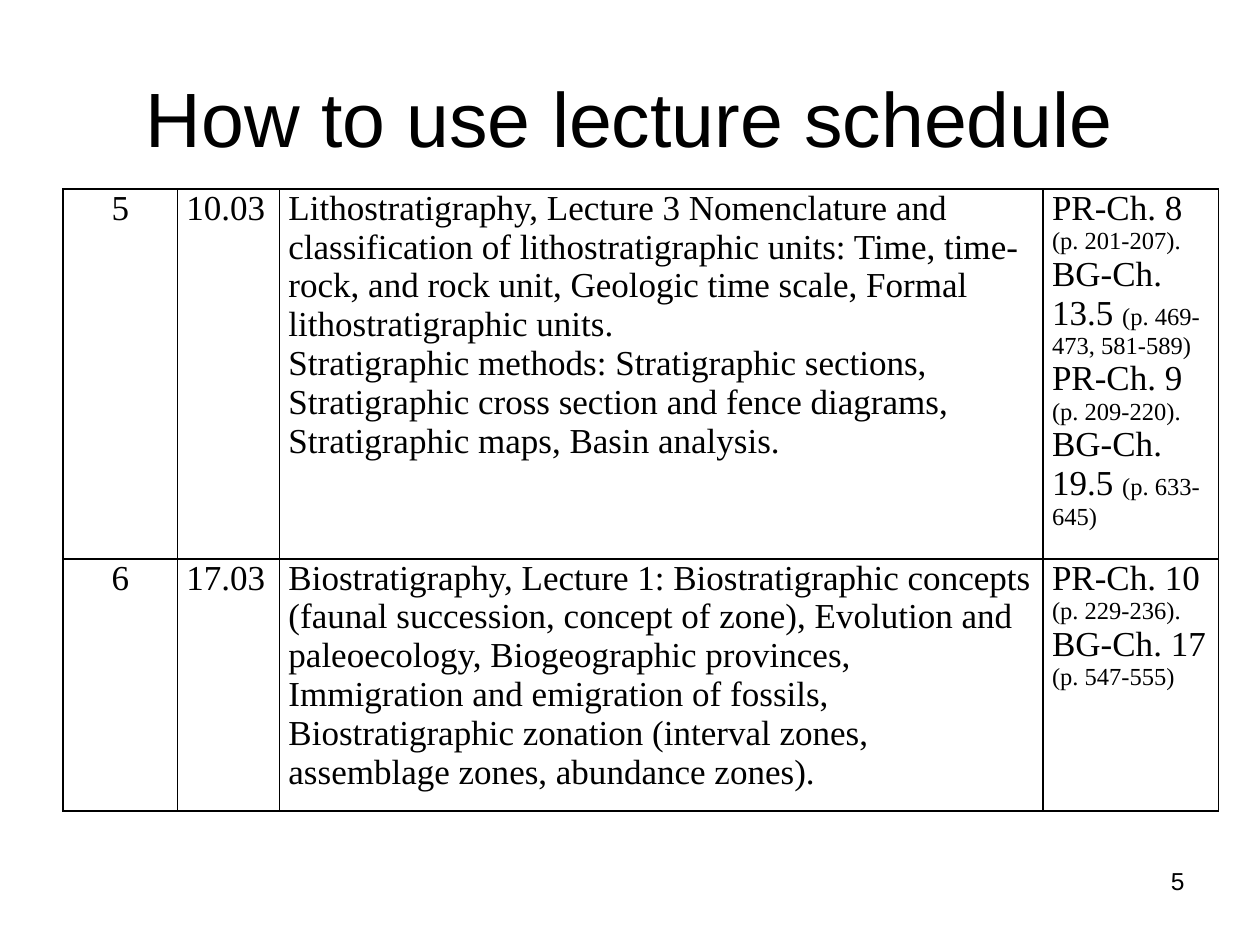
from dataclasses import dataclass

import pptx
import pptx.dml.color
import pptx.enum.text
import pptx.oxml
import pptx.oxml.ns
import pptx.util

Inches, Pt = pptx.util.Inches, pptx.util.Pt
Align, Anchor = pptx.enum.text.PP_ALIGN, pptx.enum.text.MSO_ANCHOR
BLACK = pptx.dml.color.RGBColor(0x00, 0x00, 0x00)
SANS, SERIF = "Arial", "Times New Roman"
BODY_SIZE, PAGES_SIZE = 20, 14
SLIDE_W, SLIDE_H = 10, 7.5
COL_WIDTHS = (0.91, 0.81, 6.06, 1.39)
ROW_HEIGHTS = (2.93, 2)


@dataclass
class Run:
    text: str
    size: float = BODY_SIZE
    font: str = SERIF


@dataclass
class Lecture:
    number: str
    date: str
    topics: list[str]
    readings: list[list[Run]]


@dataclass
class Label:
    run: Run
    left: float  # box position and size as shares of the slide
    top: float
    width: float
    height: float
    align: Align
    anchor: Anchor


def reading(*parts: str) -> list[Run]:
    """Alternate chapter names with smaller page references."""
    return [Run(part, PAGES_SIZE if i % 2 else BODY_SIZE) for i, part in enumerate(parts)]


LABELS = [
    Label(Run("How to use lecture schedule", 44, SANS),
          0.05, 0.04, 0.9, 1 / 6, Align.CENTER, Anchor.MIDDLE),
    Label(Run("5", 14, SANS), 0.717, 0.91, 0.233, 0.07, Align.RIGHT, Anchor.TOP),
]

LECTURES = [
    Lecture(
        "5", "10.03",
        ["Lithostratigraphy, Lecture 3 Nomenclature and classification of "
         "lithostratigraphic units: Time, time-rock, and rock unit, Geologic time scale, "
         "Formal lithostratigraphic units.",
         "Stratigraphic methods: Stratigraphic sections, Stratigraphic cross section and "
         "fence diagrams, Stratigraphic maps, Basin analysis."],
        [reading("PR-Ch. 8 ", "(p. 201-207). ", "BG-Ch. 13.5 ", "(p. 469-473, 581-589)"),
         reading("PR-Ch. 9 ", "(p. 209-220)."),
         reading("BG-Ch. 19.5 ", "(p. 633-645)")]),
    Lecture(
        "6", "17.03",
        ["Biostratigraphy, Lecture 1: Biostratigraphic concepts (faunal succession, "
         "concept of zone), Evolution and paleoecology, Biogeographic provinces, "
         "Immigration and emigration of fossils, Biostratigraphic zonation (interval "
         "zones, assemblage zones, abundance zones)."],
        [reading("PR-Ch. 10 ", "(p. 229-236)."),
         reading("BG-Ch. 17 ", "(p. 547-555)")]),
]


def write(tf, paragraphs: list[list[Run]], align: Align) -> None:
    for i, runs in enumerate(paragraphs):
        p = tf.add_paragraph() if i else tf.paragraphs[0]
        p.alignment = align
        for run in runs:
            r = p.add_run()
            r.text = run.text
            r.font.size = Pt(run.size)
            r.font.name = run.font
            r.font.color.rgb = BLACK


def add_label(s, label: Label) -> None:
    sp = s.shapes.add_textbox(
        Inches(label.left * SLIDE_W), Inches(label.top * SLIDE_H),
        Inches(label.width * SLIDE_W), Inches(label.height * SLIDE_H))
    tf = sp.text_frame
    tf.word_wrap = True
    tf.vertical_anchor = label.anchor
    write(tf, [[label.run]], label.align)


def add_borders(cell) -> None:
    tc_pr = cell._tc.get_or_add_tcPr()
    for i, side in enumerate(("lnL", "lnR", "lnT", "lnB")):
        tc_pr.insert(i, pptx.oxml.parse_xml(
            f'<a:{side} {pptx.oxml.ns.nsdecls("a")} w="{Pt(1)}">'
            f'<a:solidFill><a:srgbClr val="{BLACK}"/></a:solidFill></a:{side}>'))


def fill_cell(cell, paragraphs: list[list[Run]], align: Align) -> None:
    cell.margin_left = cell.margin_right = Inches(0.07)
    cell.margin_top = cell.margin_bottom = 0
    cell.fill.background()
    add_borders(cell)
    write(cell.text_frame, paragraphs, align)


def add_schedule(s, lectures: list[Lecture]) -> None:
    table = s.shapes.add_table(
        len(lectures), len(COL_WIDTHS), Inches(0.05 * SLIDE_W), Inches(0.2 * SLIDE_H),
        Inches(sum(COL_WIDTHS)), Inches(sum(ROW_HEIGHTS))).table
    table.first_row = table.horz_banding = False
    for column, width in zip(table.columns, COL_WIDTHS):
        column.width = Inches(width)
    for row, height, lecture in zip(table.rows, ROW_HEIGHTS, lectures):
        row.height = Inches(height)
        contents = ([[Run(lecture.number)]], [[Run(lecture.date)]],
                    [[Run(topic)] for topic in lecture.topics], lecture.readings)
        for i, (cell, paragraphs) in enumerate(zip(row.cells, contents)):
            fill_cell(cell, paragraphs, Align.LEFT if i else Align.CENTER)


def main() -> None:
    prs = pptx.Presentation()
    prs.slide_width, prs.slide_height = Inches(SLIDE_W), Inches(SLIDE_H)
    s = prs.slides.add_slide(prs.slide_layouts[6])
    for label in LABELS:
        add_label(s, label)
    add_schedule(s, LECTURES)
    prs.save("out.pptx")


if __name__ == "__main__":
    main()
